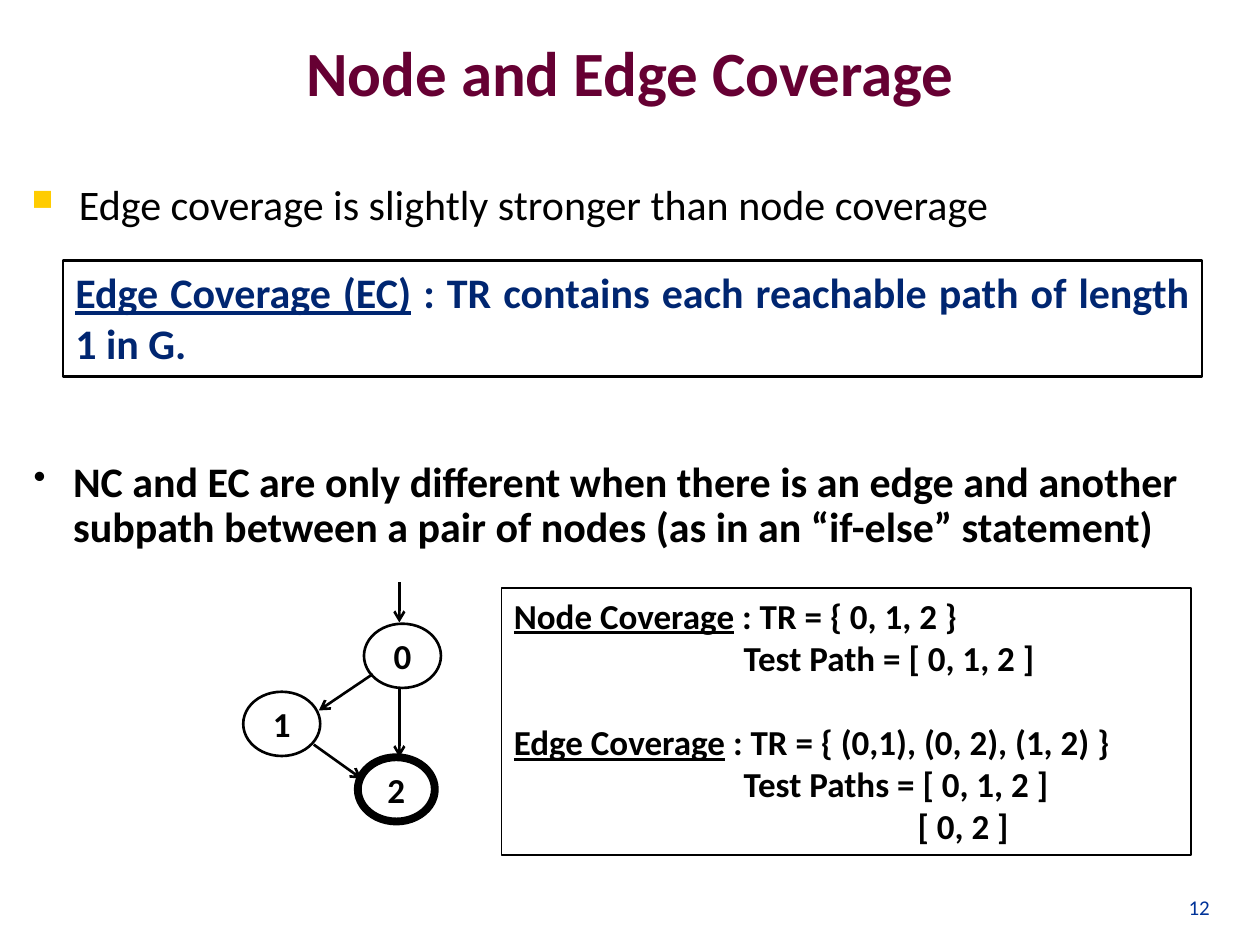
from lxml.etree import SubElement
from pptx import Presentation
from pptx.dml.color import RGBColor
from pptx.enum.shapes import MSO_CONNECTOR, MSO_SHAPE
from pptx.enum.text import MSO_ANCHOR, PP_ALIGN
from pptx.oxml.ns import qn
from pptx.util import Pt

COLORS = {
    "ink": "000000",
    "title": "660033",
    "definition": "002671",
    "number": "003399",
    "bullet": "FFCC00",
}


class SlideBuilder:
    """Draw styled elements, measured in points, on the current slide."""

    font = "Calibri"

    def __init__(self, slide):
        self.slide = slide

    def color(self, name):
        return RGBColor.from_string(COLORS[name])

    def style(self, paragraph, size, color="ink", bold=True, align=PP_ALIGN.LEFT):
        paragraph.alignment = align
        for run in paragraph.runs:
            run.font.name = self.font
            run.font.size = Pt(size)
            run.font.bold = bold
            run.font.color.rgb = self.color(color)

    def text(self, box, content, size, anchor=MSO_ANCHOR.TOP, **style):
        shape = self.slide.shapes.add_textbox(*map(Pt, box))
        frame = shape.text_frame
        frame.word_wrap = True
        frame.vertical_anchor = anchor
        frame.text = content
        self.style(frame.paragraphs[0], size, **style)
        return frame.paragraphs[0]

    def bullet(self, box, content, symbol, percent, indent, color="ink", bold=True, spacing=1.0):
        paragraph = self.text(box, content, 24, bold=bold)
        paragraph.line_spacing = spacing
        properties = paragraph._p.get_or_add_pPr()
        properties.set("marL", str(Pt(indent)))
        properties.set("indent", str(-Pt(indent)))
        fill = SubElement(properties, qn("a:buClr"))
        SubElement(fill, qn("a:srgbClr"), val=COLORS[color])
        SubElement(properties, qn("a:buSzPct"), val=str(percent * 1000))
        SubElement(properties, qn("a:buChar"), char=symbol)

    def outline(self, kind, box, width):
        shape = self.slide.shapes.add_shape(kind, *map(Pt, box))
        shape.shadow.inherit = False
        shape.fill.background()
        shape.line.color.rgb = self.color("ink")
        shape.line.width = Pt(width)
        shape.text_frame.word_wrap = True
        return shape

    def panel(self, box, width, lines, size, color="ink", align=PP_ALIGN.LEFT):
        frame = self.outline(MSO_SHAPE.RECTANGLE, box, width).text_frame
        frame.vertical_anchor = MSO_ANCHOR.TOP
        for index, (term, rest, indent, gap) in enumerate(lines):
            paragraph = frame.add_paragraph() if index else frame.paragraphs[0]
            paragraph.text = term
            paragraph.add_run().text = rest
            self.style(paragraph, size, color, align=align)
            if term:
                paragraph.runs[0].font.underline = True
            paragraph.space_before = Pt(gap)
            paragraph._p.get_or_add_pPr().set("marL", str(Pt(indent)))

    def node(self, label, left, top, width=1.5):
        shape = self.outline(MSO_SHAPE.OVAL, (left, top, 44, 36.7), width)
        frame = shape.text_frame
        frame.margin_left = frame.margin_right = frame.margin_top = frame.margin_bottom = 0
        frame.vertical_anchor = MSO_ANCHOR.MIDDLE
        frame.text = label
        self.style(frame.paragraphs[0], 20, align=PP_ALIGN.CENTER)

    def arrow(self, start, end):
        connector = self.slide.shapes.add_connector(
            MSO_CONNECTOR.STRAIGHT, *map(Pt, start + end))
        connector.line.color.rgb = self.color("ink")
        connector.line.width = Pt(1.5)
        SubElement(connector.line._get_or_add_ln(), qn("a:tailEnd"), type="arrow")
        SubElement(connector._element.spPr, qn("a:effectLst"))


def main():
    presentation = Presentation()
    presentation.slide_width, presentation.slide_height = Pt(720), Pt(540)
    builder = SlideBuilder(presentation.slides.add_slide(presentation.slide_layouts[6]))

    builder.text((54, 8, 612, 65), "Node and Edge Coverage", 36, MSO_ANCHOR.MIDDLE,
                 color="title", align=PP_ALIGN.CENTER)
    builder.bullet((11, 98.6, 698, 37.5), "Edge coverage is slightly stronger than node coverage",
                   "■", 70, 27, color="bullet", bold=False)
    builder.panel((36, 149, 651, 66.2), 1.5,
                  [("Edge Coverage (EC)", " : TR contains each reachable path of length 1 in G.", 0, 0)],
                  24, "definition", PP_ALIGN.JUSTIFY)
    builder.bullet((12.2, 260, 698, 60),
                   "NC and EC are only different when there is an edge and another "
                   "subpath between a pair of nodes (as in an “if-else” statement)",
                   "•", 85, 22.5, spacing=0.9)

    path_indent, second_path_indent, blank_line = 131.4, 230.8, 24.4
    builder.panel((286.5, 336, 394, 152.6), 1, [
        ("Node Coverage", " : TR = { 0, 1, 2 }", 0, 0),
        ("", "Test Path = [ 0, 1, 2 ]", path_indent, 0),
        ("Edge Coverage", " : TR = { (0,1), (0, 2), (1, 2) }", 0, blank_line),
        ("", "Test Paths = [ 0, 1, 2 ]", path_indent, 0),
        ("", "[ 0, 2 ]", second_path_indent, 0),
    ], 20)

    builder.node("1", 139, 395.3)
    builder.node("2", 204.5, 432.7, width=4.5)
    builder.node("0", 208, 356.4)
    for start, end in [
        ((213, 385.2), (182.2, 406)),
        ((179.3, 425.5), (206.6, 445)),
        ((228.2, 393.8), (228.2, 432.7)),
        ((228.2, 332.6), (228.2, 355.7)),
    ]:
        builder.arrow(start, end)

    builder.text((648.7, 491.8, 49.7, 37.4), "12", 12, MSO_ANCHOR.BOTTOM,
                 color="number", bold=False, align=PP_ALIGN.RIGHT)
    presentation.save("out.pptx")


if __name__ == "__main__":
    main()
